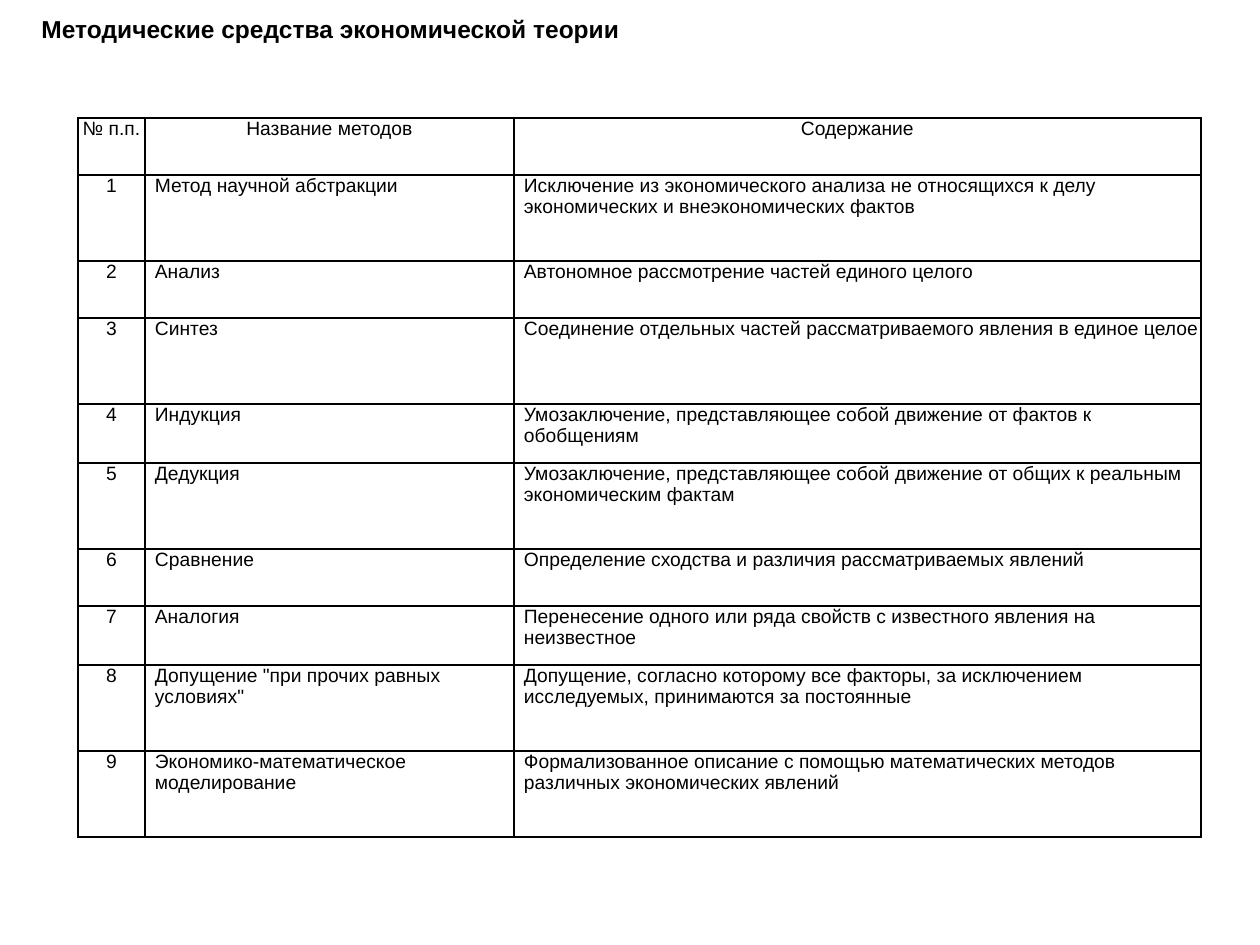
from dataclasses import dataclass

from lxml.etree import SubElement
from pptx import Presentation
from pptx.dml.color import RGBColor
from pptx.enum.text import MSO_ANCHOR as Anchor, PP_ALIGN as Align
from pptx.oxml.ns import qn
from pptx.slide import Slide
from pptx.table import _Cell as Cell
from pptx.text.text import _Paragraph as Paragraph
from pptx.util import Emu, Pt

EMU_PER_PX = 914400 / 126


@dataclass(frozen=True)
class Theme:
    font: str = "Arial"
    ink: str = "000000"
    title_size: int = 14
    body_size: int = 11
    border_width: int = 1


@dataclass(frozen=True)
class Box:
    left: int
    top: int
    width: int
    height: int


@dataclass(frozen=True)
class Method:
    name: str
    content: str
    height: int


THEME = Theme()
LOW, MEDIUM, TALL = 57, 59, 86
COLUMN_WIDTHS = (67, 369, 687)
TABLE_LEFT, TABLE_TOP = 78, 118
TEXT_INDENT = 10
HEADINGS = ("№ п.п.", "Название методов", "Содержание")
METHODS = (
    Method("Метод научной абстракции",
           "Исключение из экономического анализа не относящихся к делу "
           "экономических и внеэкономических фактов", TALL),
    Method("Анализ", "Автономное рассмотрение частей единого целого", LOW),
    Method("Синтез",
           "Соединение отдельных частей рассматриваемого явления в единое целое", TALL),
    Method("Индукция",
           "Умозаключение, представляющее собой движение от фактов к обобщениям", MEDIUM),
    Method("Дедукция",
           "Умозаключение, представляющее собой движение от общих к реальным "
           "экономическим фактам", TALL),
    Method("Сравнение",
           "Определение сходства и различия рассматриваемых явлений", LOW),
    Method("Аналогия",
           "Перенесение одного или ряда свойств с известного явления на неизвестное", MEDIUM),
    Method('Допущение "при прочих равных условиях"',
           "Допущение, согласно которому все факторы, за исключением исследуемых, "
           "принимаются за постоянные", TALL),
    Method("Экономико-математическое моделирование",
           "Формализованное описание с помощью математических методов "
           "различных экономических явлений", TALL),
)


def px(length: int) -> Emu:
    return Emu(round(length * EMU_PER_PX))


def style_text(paragraph: Paragraph, size: int, bold: bool = False) -> None:
    for run in paragraph.runs:
        run.font.name = THEME.font
        run.font.size = Pt(size)
        run.font.bold = bold
        run.font.color.rgb = RGBColor.from_string(THEME.ink)


def draw_title(slide: Slide, text: str, box: Box) -> None:
    title = slide.shapes.add_textbox(
        px(box.left), px(box.top), px(box.width), px(box.height))
    frame = title.text_frame
    frame.word_wrap = True
    frame.vertical_anchor = Anchor.TOP
    frame.text = text
    style_text(frame.paragraphs[0], THEME.title_size, bold=True)


def draw_borders(cell: Cell) -> None:
    properties = cell._tc.get_or_add_tcPr()
    for side in ("a:lnL", "a:lnR", "a:lnT", "a:lnB"):
        border = SubElement(properties, qn(side), w=str(Pt(THEME.border_width)))
        ink = SubElement(border, qn("a:solidFill"))
        SubElement(ink, qn("a:srgbClr"), val=THEME.ink)


def fill_cell(cell: Cell, text: str, centered: bool) -> None:
    draw_borders(cell)
    cell.fill.background()
    cell.margin_left = px(0 if centered else TEXT_INDENT)
    cell.margin_right = cell.margin_top = cell.margin_bottom = px(0)
    cell.vertical_anchor = Anchor.TOP
    cell.text_frame.text = text
    paragraph = cell.text_frame.paragraphs[0]
    paragraph.alignment = Align.CENTER if centered else Align.LEFT
    style_text(paragraph, THEME.body_size)


def draw_methods(slide: Slide, methods: tuple[Method, ...]) -> None:
    entries = [HEADINGS] + [
        (str(number), method.name, method.content)
        for number, method in enumerate(methods, start=1)
    ]
    heights = [LOW] + [method.height for method in methods]
    table = slide.shapes.add_table(
        len(entries), len(HEADINGS), px(TABLE_LEFT), px(TABLE_TOP),
        px(sum(COLUMN_WIDTHS)), px(sum(heights))).table
    table.first_row = False
    table.horz_banding = False
    for column, width in zip(table.columns, COLUMN_WIDTHS):
        column.width = px(width)
    for row_index, (entry, height) in enumerate(zip(entries, heights)):
        table.rows[row_index].height = px(height)
        for column_index, text in enumerate(entry):
            centered = row_index == 0 or column_index == 0
            fill_cell(table.cell(row_index, column_index), text, centered)


def main() -> None:
    presentation = Presentation()
    presentation.slide_width = px(1260)
    presentation.slide_height = px(945)
    slide = presentation.slides.add_slide(presentation.slide_layouts[6])
    draw_methods(slide, METHODS)
    draw_title(slide, "Методические средства экономической теории",
               Box(29, 8, 1231, 63))
    presentation.save("out.pptx")


if __name__ == "__main__":
    main()
